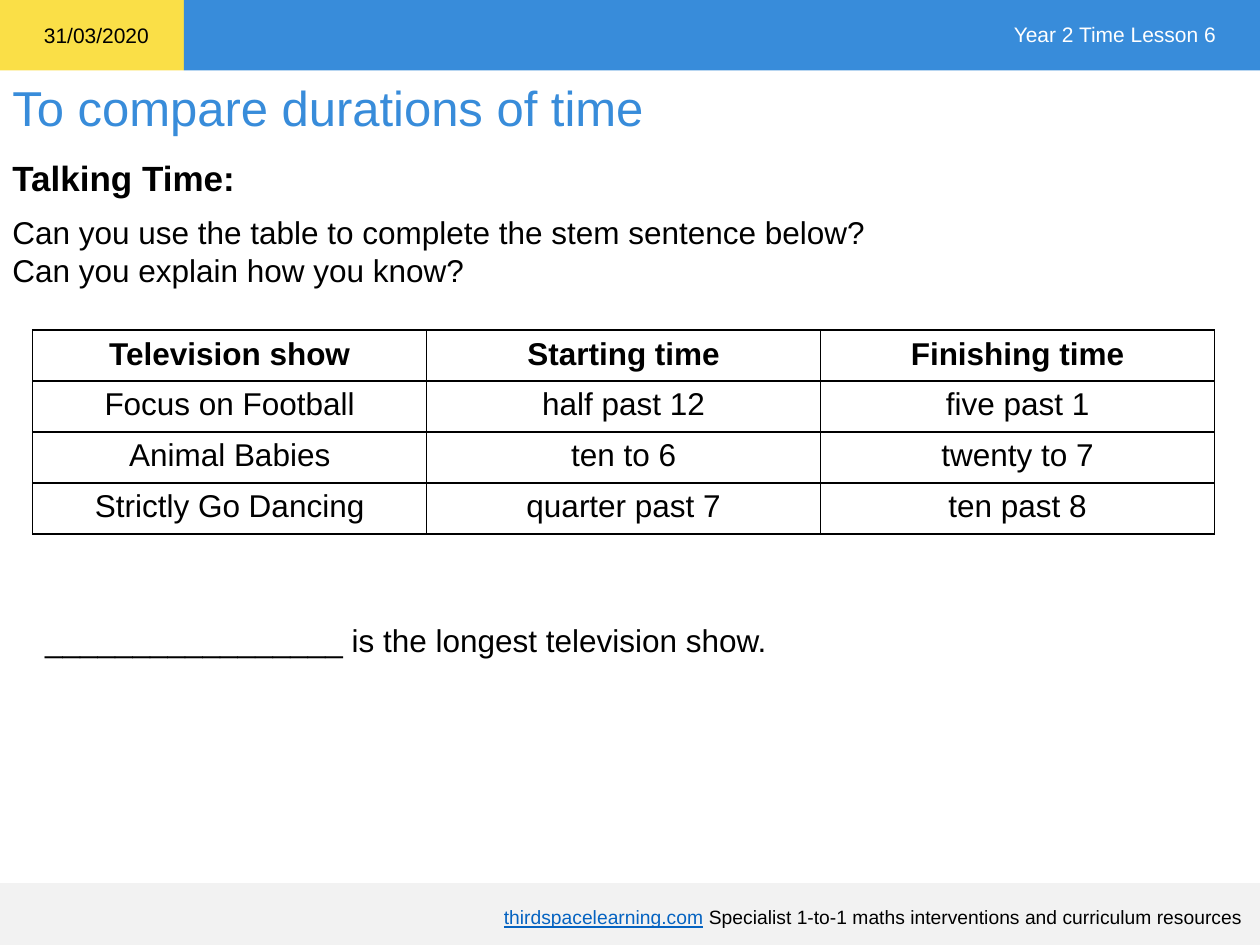
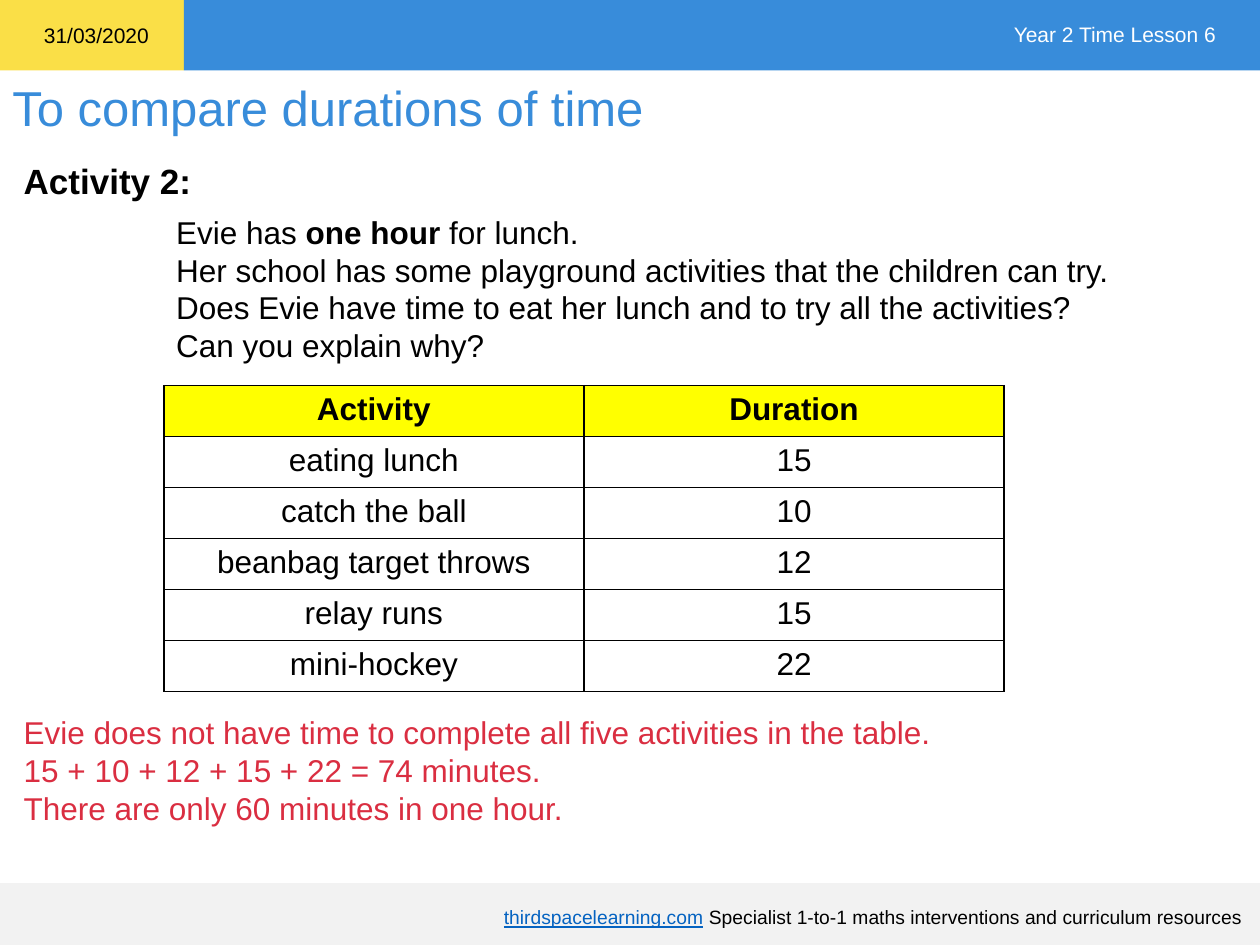
import pptx
import pptx.util
import pptx.dml.color
import pptx.enum.shapes
import pptx.enum.text
import pptx.oxml
import pptx.oxml.ns

RGBColor = pptx.dml.color.RGBColor
PP_ALIGN = pptx.enum.text.PP_ALIGN
MSO_ANCHOR = pptx.enum.text.MSO_ANCHOR

# Shared colours and font
BLUE = RGBColor(0x38, 0x8C, 0xDA)
GOLD = RGBColor(0xFA, 0xDF, 0x47)
GREY = RGBColor(0xF2, 0xF2, 0xF2)
LINK = RGBColor(0x05, 0x63, 0xC1)
RED = RGBColor(0xDA, 0x2E, 0x41)
YELLOW = RGBColor(0xFF, 0xFF, 0x00)
BLACK = RGBColor(0, 0, 0)
WHITE = RGBColor(0xFF, 0xFF, 0xFF)
FONT = "Arial"
BODY_SIZE = 18

# Slide grid: 100 columns by 75 rows
W, H = pptx.util.Inches(10), pptx.util.Inches(7.5)
COLS, ROWS = 100, 75
BAND_ROWS = 5.6
DATE_COLS = 14.6
FOOTER_TOP = 70.1
TABLE_ROW = 4.05


def place(left, top, width, height):
    """Turn grid columns and rows into slide lengths."""
    return (int(left * W / COLS), int(top * H / ROWS),
            int(width * W / COLS), int(height * H / ROWS))


def style_font(font, size, color, bold=False):
    font.name = FONT
    font.size = pptx.util.Pt(size)
    font.bold = bold
    font.color.rgb = color


def add_band(s, box, color):
    sp = s.shapes.add_shape(pptx.enum.shapes.MSO_SHAPE.RECTANGLE, *place(*box))
    sp.shadow.inherit = False
    sp.fill.solid()
    sp.fill.fore_color.rgb = color
    sp.line.fill.background()


def add_text(s, box, lines, size=BODY_SIZE, color=BLACK, bold=False,
             align=PP_ALIGN.LEFT, anchor=MSO_ANCHOR.TOP):
    """Each line is a tuple of runs; returns the text frame."""
    tf = s.shapes.add_textbox(*place(*box)).text_frame
    tf.word_wrap = True
    tf.vertical_anchor = anchor
    for i, parts in enumerate(lines):
        p = tf.paragraphs[0] if i == 0 else tf.add_paragraph()
        p.alignment = align
        for part in parts:
            r = p.add_run()
            r.text = part
            style_font(r.font, size, color, bold)
    return tf


def add_heading(s, left, top, text):
    tf = add_text(s, (left, top, 30, 4.4), [(text,)], 20, bold=True)
    tf.paragraphs[0].line_spacing = 1.07


def add_borders(cell):
    tc_pr = cell._tc.get_or_add_tcPr()
    for i, side in enumerate(("lnL", "lnR", "lnT", "lnB")):
        tc_pr.insert(i, pptx.oxml.parse_xml(
            f'<a:{side} {pptx.oxml.ns.nsdecls("a")} w="{pptx.util.Pt(1)}">'
            f'<a:solidFill><a:srgbClr val="{BLACK}"/></a:solidFill></a:{side}>'))


def add_grid_table(s, left, top, width, rows, header_fill):
    box = place(left, top, width, TABLE_ROW * len(rows))
    table = s.shapes.add_table(len(rows), len(rows[0]), *box).table
    table.horz_banding = False
    for i, row in enumerate(rows):
        for j, text in enumerate(row):
            cell = table.cell(i, j)
            cell.text = text
            cell.fill.solid()
            cell.fill.fore_color.rgb = header_fill if i == 0 else WHITE
            add_borders(cell)
            p = cell.text_frame.paragraphs[0]
            p.alignment = PP_ALIGN.CENTER
            style_font(p.runs[0].font, BODY_SIZE, BLACK, bold=i == 0)


def add_lesson_slide(prs):
    """Blank slide with the shared bands, title and footer."""
    s = prs.slides.add_slide(prs.slide_layouts[6])
    add_band(s, (0, 0, DATE_COLS, BAND_ROWS), GOLD)
    add_band(s, (DATE_COLS, 0, COLS - DATE_COLS, BAND_ROWS), BLUE)
    add_band(s, (0, FOOTER_TOP, COLS, ROWS - FOOTER_TOP), GREY)
    tf = add_text(s, (4.2, 71.3, 95.4, 3),
                  [("thirdspacelearning.com",
                    " Specialist 1-to-1 maths interventions and curriculum resources")],
                  11, align=PP_ALIGN.RIGHT, anchor=MSO_ANCHOR.MIDDLE)
    link = tf.paragraphs[0].runs[0].font
    link.color.rgb = LINK
    link.underline = True
    add_text(s, (0, 5.7, 97.7, 5.7), [("To compare durations of time",)], 28, BLUE)
    add_text(s, (2.5, 1.3, 11.5, 3), [("31/03/2020",)], 12)
    add_text(s, (77.5, 1.2, 20, 3), [("Year 2 Time Lesson 6",)], 12, WHITE,
             align=PP_ALIGN.RIGHT)
    return s


def add_talking_time(prs):
    s = add_lesson_slide(prs)
    add_heading(s, 0, 11.7, "Talking Time:")
    add_text(s, (0, 16.4, 93.8, 7.1), [
        ("Can you use the table to complete the stem sentence below?",),
        ("Can you explain how you know?",)])
    add_grid_table(s, 2.6, 26.2, 93.8, [
        ("Television show", "Starting time", "Finishing time"),
        ("Focus on Football", "half past 12", "five past 1"),
        ("Animal Babies", "ten to 6", "twenty to 7"),
        ("Strictly Go Dancing", "quarter past 7", "ten past 8")], WHITE)
    add_text(s, (2.6, 48.8, 92.6, 4),
             [("_________________ is the longest television show.",)])


def add_activity(prs):
    s = add_lesson_slide(prs)
    add_heading(s, 0.9, 11.9, "Activity 2:")
    tf = add_text(s, (13, 16.4, 87, 13.1), [
        ("Evie has ", "one hour ", "for lunch."),
        ("Her school has some playground activities that the children can try.",),
        ("Does Evie have time to eat her lunch and to try all the activities?",),
        ("Can you explain why?",)])
    tf.paragraphs[0].runs[1].font.bold = True
    add_grid_table(s, 13, 30.6, 66.7, [
        ("Activity", "Duration"),
        ("eating lunch", "15"),
        ("catch the ball", "10"),
        ("beanbag target throws", "12"),
        ("relay runs", "15"),
        ("mini-hockey", "22")], YELLOW)
    add_text(s, (0.9, 56.1, 80, 10.1), [
        ("Evie does not have time to complete all five activities in the table.",),
        ("15 + 10 + 12 + 15 + 22 = 74 minutes.",),
        ("There are only 60 minutes in one hour.",)], color=RED)


def main():
    prs = pptx.Presentation()
    prs.slide_width, prs.slide_height = W, H
    add_talking_time(prs)
    add_activity(prs)
    prs.save("out.pptx")


if __name__ == "__main__":
    main()
